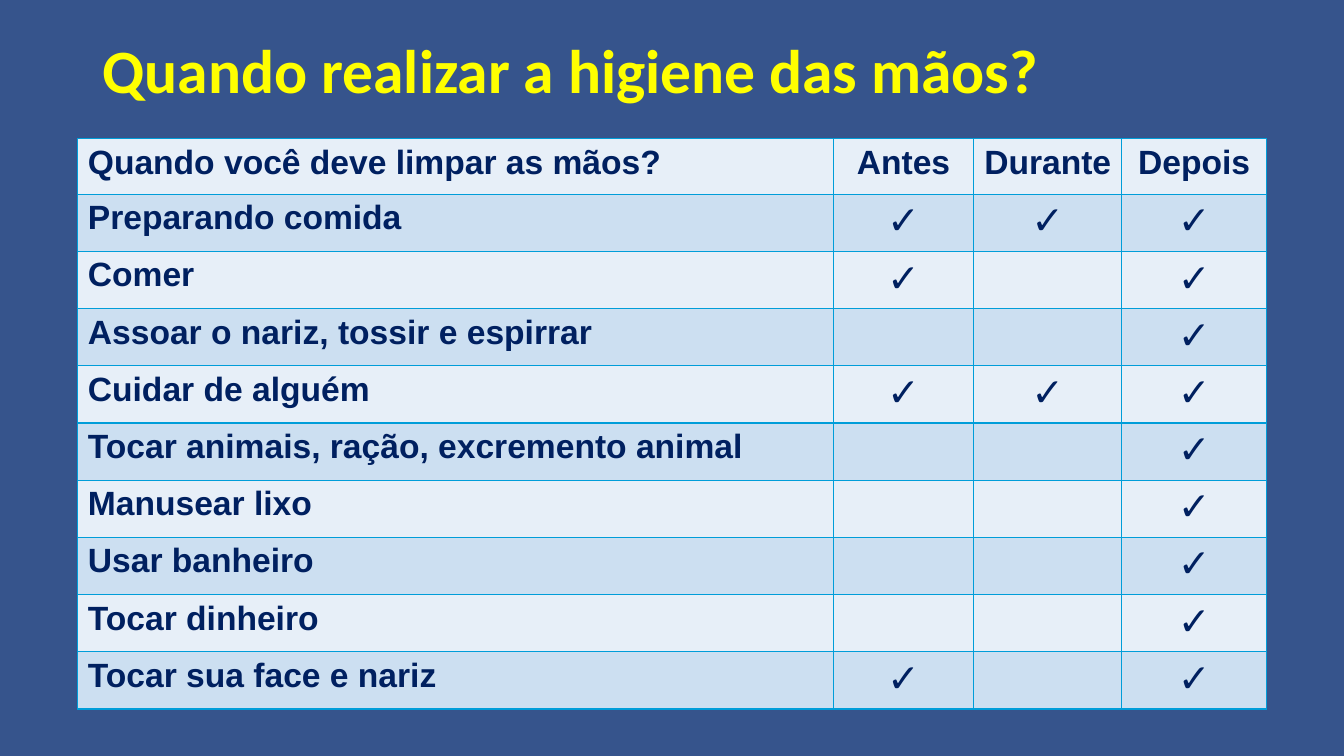
"""Builds a slide with a table of the moments for washing hands."""
from lxml import etree
from pptx import Presentation
from pptx.dml.color import RGBColor
from pptx.enum.text import MSO_ANCHOR, PP_ALIGN
from pptx.oxml.ns import qn
from pptx.util import Pt

LEFT, CENTER = PP_ALIGN.LEFT, PP_ALIGN.CENTER
MIDDLE = MSO_ANCHOR.MIDDLE

BACKGROUND = RGBColor(0x36, 0x54, 0x8C)
YELLOW = RGBColor(0xFF, 0xFF, 0x00)
NAVY = RGBColor(0x00, 0x20, 0x60)
BORDER = RGBColor(0x00, 0x9D, 0xD9)
BANDS = (RGBColor(0xE7, 0xEF, 0xF8), RGBColor(0xCC, 0xDF, 0xF1))

TITLE = "Quando realizar a higiene das mãos?"
QUESTION = "Quando você deve limpar as mãos?"
MOMENTS = ("Antes", "Durante", "Depois")
ACTIVITIES = [
    ("Preparando comida", MOMENTS),
    ("Comer", ("Antes", "Depois")),
    ("Assoar o nariz, tossir e espirrar", ("Depois",)),
    ("Cuidar de alguém", MOMENTS),
    ("Tocar animais, ração, excremento animal", ("Depois",)),
    ("Manusear lixo", ("Depois",)),
    ("Usar banheiro", ("Depois",)),
    ("Tocar dinheiro", ("Depois",)),
    ("Tocar sua face e nariz", ("Antes", "Depois")),
]
CHECK = "✓"

SLIDE_SIZE = (960, 540)
TITLE_BOX = (66.24, 0, 828, 104.4)
TABLE_LEFT, TABLE_TOP = 55.6, 99.2
COLUMN_WIDTHS = (539.5, 100.6, 105.5, 103.8)
ROW_HEIGHT = 39.6
BORDER_WIDTH = 1


def write_text(frame, text, *, size, color, font="Arial", align=LEFT, spacing=1.0):
    para = frame.paragraphs[0]
    para.alignment = align
    para.line_spacing = spacing
    span = para.add_run()
    span.text = text
    span.font.name = font
    span.font.size = Pt(size)
    span.font.bold = True
    span.font.color.rgb = color


def draw_borders(cell):
    properties = cell._tc.get_or_add_tcPr()
    for side in ("a:lnL", "a:lnR", "a:lnT", "a:lnB"):
        line = etree.SubElement(properties, qn(side), w=str(Pt(BORDER_WIDTH)))
        fill = etree.SubElement(line, qn("a:solidFill"))
        etree.SubElement(fill, qn("a:srgbClr"), val=str(BORDER))


def add_title(page):
    box = page.shapes.add_textbox(*map(Pt, TITLE_BOX))
    frame = box.text_frame
    frame.word_wrap = True
    frame.vertical_anchor = MIDDLE
    write_text(frame, TITLE, size=44, color=YELLOW, font="Calibri", spacing=0.9)


def add_schedule(page):
    rows = [(QUESTION, *MOMENTS)]
    for activity, times in ACTIVITIES:
        rows.append((activity, *(CHECK if moment in times else "" for moment in MOMENTS)))
    table = page.shapes.add_table(
        len(rows), len(COLUMN_WIDTHS), Pt(TABLE_LEFT), Pt(TABLE_TOP),
        Pt(sum(COLUMN_WIDTHS)), Pt(ROW_HEIGHT * len(rows))).table
    for column, width in zip(table.columns, COLUMN_WIDTHS):
        column.width = Pt(width)
    for row_index, texts in enumerate(rows):
        table.rows[row_index].height = Pt(ROW_HEIGHT)
        for column_index, text in enumerate(texts):
            cell = table.cell(row_index, column_index)
            draw_borders(cell)
            cell.fill.solid()
            cell.fill.fore_color.rgb = BANDS[row_index % 2]
            if text:
                write_text(cell.text_frame, text, size=28 if text == CHECK else 24,
                           color=NAVY, align=CENTER if column_index else LEFT)


def main():
    deck = Presentation()
    deck.slide_width, deck.slide_height = map(Pt, SLIDE_SIZE)
    page = deck.slides.add_slide(deck.slide_layouts[6])
    page.background.fill.solid()
    page.background.fill.fore_color.rgb = BACKGROUND
    add_title(page)
    add_schedule(page)
    deck.save("out.pptx")


if __name__ == "__main__":
    main()
